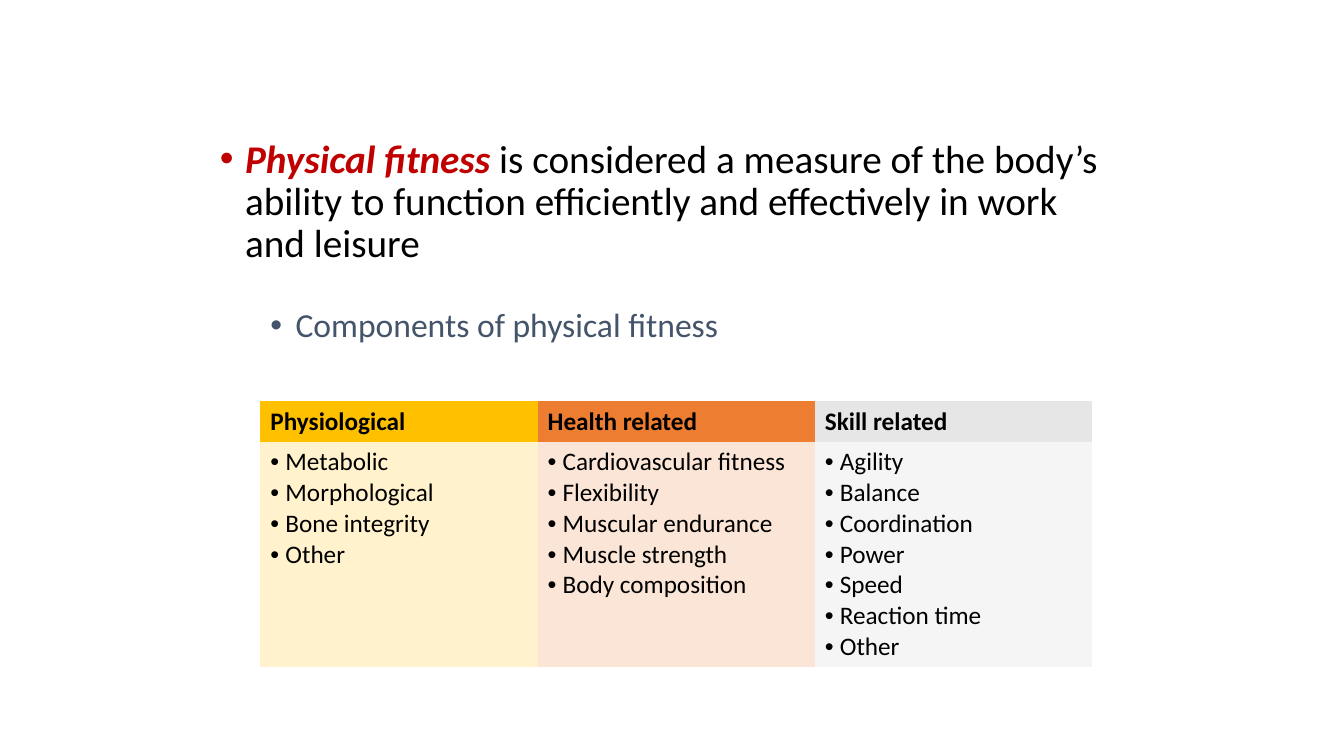
"""Build a slide that defines physical fitness and tabulates its components."""
from pptx import Presentation
from pptx.dml.color import RGBColor
from pptx.enum.text import MSO_ANCHOR
from pptx.oxml.ns import qn
from pptx.util import Pt
from lxml.etree import SubElement

COLORS = {
    "black": "000000", "red": "C00000", "slate": "44546A",
    "gold": "FFC000", "pale gold": "FFF2CC",
    "orange": "ED7D31", "pale orange": "FBE5D6",
    "gray": "E7E6E6", "pale gray": "F5F5F5",
}
NO_STYLE_NO_GRID = "{2D5ABB26-0587-4C30-8999-92F81FD0307C}"


def add_text(para, text, size=18, color="black", bold=False, italic=False):
    span = para.add_run()
    span.text = text
    span.font.name = "Calibri"
    span.font.size = Pt(size)
    span.font.bold = bold
    span.font.italic = italic
    span.font.color.rgb = RGBColor.from_string(COLORS[color])


def add_bullet(para, left, hang):
    properties = para._p.get_or_add_pPr()
    properties.set("marL", str(Pt(left)))
    properties.set("indent", str(-Pt(hang)))
    SubElement(properties, qn("a:buFont"), typeface="Arial")
    SubElement(properties, qn("a:buChar"), char="•")


deck = Presentation()
deck.slide_width, deck.slide_height = Pt(960), Pt(540)
page = deck.slides.add_slide(deck.slide_layouts[6])

box = page.shapes.add_textbox(Pt(150), Pt(96), Pt(660), Pt(216))
frame = box.text_frame
frame.word_wrap = True

definition = frame.paragraphs[0]
add_bullet(definition, left=18, hang=18)
definition.line_spacing = 0.9
add_text(definition, "Physical fitness ", size=28, color="red", bold=True, italic=True)
add_text(definition, "is considered a measure of the body’s ability to function "
         "efficiently and effectively in work and leisure", size=28)

subtopic = frame.add_paragraph()
add_bullet(subtopic, left=54, hang=18)
subtopic.line_spacing = 0.9
subtopic.space_before = Pt(30)
add_text(subtopic, "Components of physical fitness", size=24, color="slate")

components = [
    ("Physiological", "gold", ["Metabolic", "Morphological", "Bone integrity", "Other"]),
    ("Health related", "orange", ["Cardiovascular fitness", "Flexibility",
                                  "Muscular endurance", "Muscle strength",
                                  "Body composition"]),
    ("Skill related", "gray", ["Agility", "Balance", "Coordination", "Power", "Speed",
                               "Reaction time", "Other"]),
]
holder = page.shapes.add_table(2, len(components), Pt(186), Pt(286.5), Pt(594), Pt(190))
table = holder.table
table.horz_banding = False
table._tbl.tblPr.find(qn("a:tableStyleId")).text = NO_STYLE_NO_GRID
table.rows[0].height, table.rows[1].height = Pt(29), Pt(161)

for column, (heading, color, items) in enumerate(components):
    header, body = table.cell(0, column), table.cell(1, column)
    for cell, fill in ((header, color), (body, f"pale {color}")):
        cell.fill.solid()
        cell.fill.fore_color.rgb = RGBColor.from_string(COLORS[fill])
    header.vertical_anchor = MSO_ANCHOR.MIDDLE
    add_text(header.text_frame.paragraphs[0], heading, bold=True)
    for number, item in enumerate(items):
        para = body.text_frame.add_paragraph() if number else body.text_frame.paragraphs[0]
        add_bullet(para, left=10.7, hang=10.7)
        add_text(para, item)

deck.save("out.pptx")
